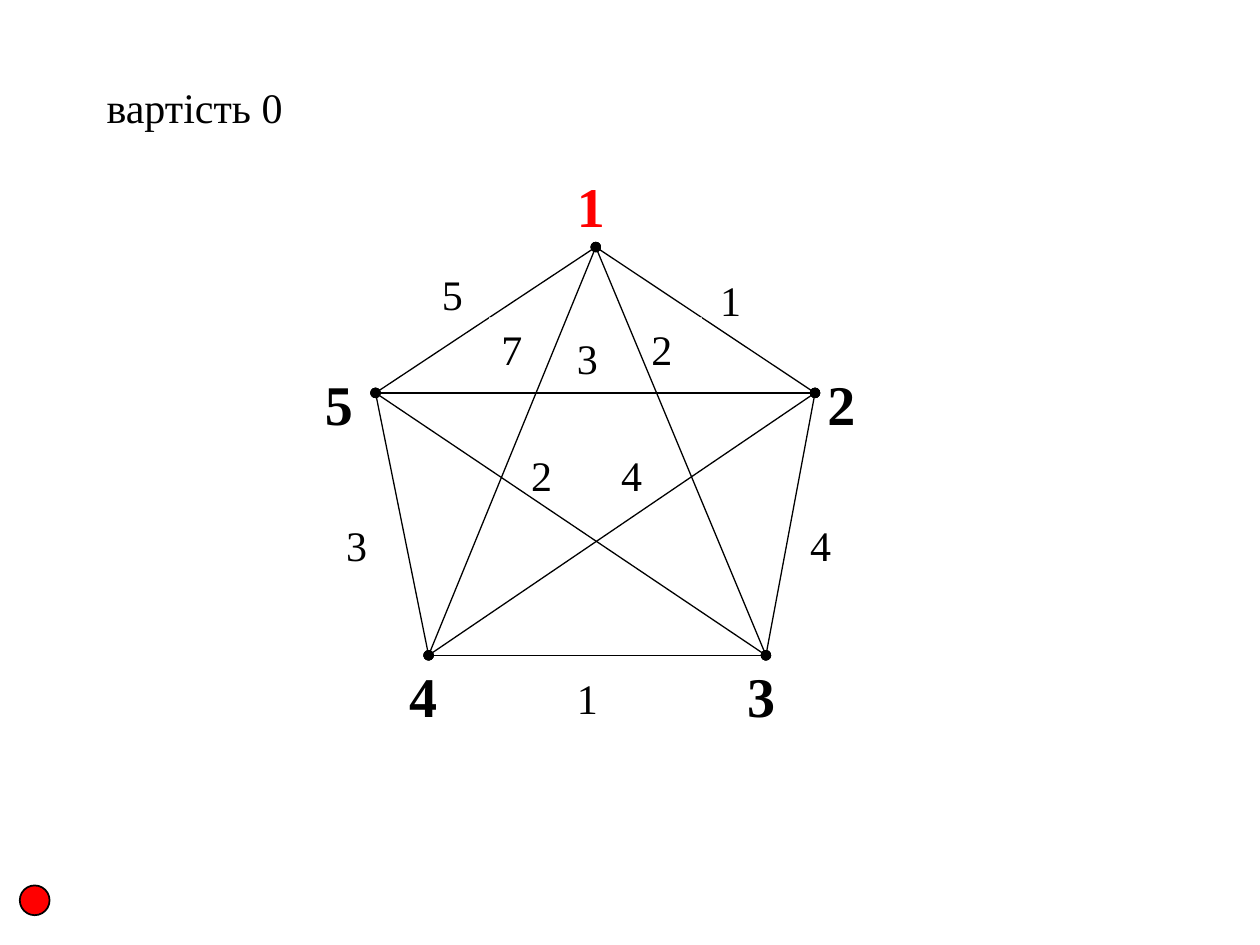
from lxml.etree import SubElement
from pptx import Presentation
from pptx.dml.color import RGBColor
from pptx.enum.shapes import MSO_CONNECTOR, MSO_SHAPE
from pptx.enum.text import MSO_ANCHOR, MSO_AUTO_SIZE, PP_ALIGN
from pptx.oxml.ns import qn
from pptx.util import Cm, Pt

COLORS = {"black": "000000", "white": "FFFFFF", "red": "FF0000"}
RGB = {name: RGBColor.from_string(value) for name, value in COLORS.items()}

# number: (point, label corner, label height, label colour)
VERTICES = {
    1: ((12.01, 4.98), (11.38, 3.33), 1.6, "red"),
    2: ((16.43, 7.92), (16.43, 7.32), 1.19, "black"),
    3: ((15.44, 13.21), (14.81, 13.21), 1.19, "black"),
    4: ((8.64, 13.21), (8, 13.21), 1.19, "black"),
    5: ((7.57, 7.92), (6.3, 7.32), 1.19, "black"),
}
# start, end, cost, label corner
EDGES = [
    (1, 5, 5, (8.66, 5.28)),
    (2, 5, 3, (11.38, 6.58)),
    (2, 1, 1, (14.27, 5.41)),
    (3, 1, 2, (12.88, 6.4)),
    (1, 4, 7, (9.86, 6.4)),
    (3, 5, 2, (10.46, 8.94)),
    (2, 4, 4, (12.27, 8.94)),
    (3, 4, 1, (11.38, 13.44)),
    (2, 3, 4, (16.08, 10.34)),
    (5, 4, 3, (6.73, 10.34)),
]


def style_text(p, size, color="black", bold=False):
    font = p.runs[0].font
    font.name = "Times New Roman"
    font.size = Pt(size)
    font.bold = bold
    font.color.rgb = RGB[color]


def add_label(shapes, number, corner, height, size, color="black", bold=False):
    s = shapes.add_shape(MSO_SHAPE.RECTANGLE, Cm(corner[0]), Cm(corner[1]), Cm(1.27), Cm(height))
    s.shadow.inherit = False
    s.fill.solid()
    s.fill.fore_color.rgb = RGB["white"]
    s.line.fill.background()
    tf = s.text_frame
    tf.text = str(number)
    tf.vertical_anchor = MSO_ANCHOR.TOP
    p = tf.paragraphs[0]
    p.alignment = PP_ALIGN.LEFT
    style_text(p, size, color, bold)


prs = Presentation()
prs.slide_width, prs.slide_height = Cm(25.4), Cm(19.05)
slide = prs.slides.add_slide(prs.slide_layouts[6])

for number, (point, corner, height, color) in VERTICES.items():
    add_label(slide.shapes, number, corner, height, 32, color, bold=True)

for start, end, cost, corner in EDGES:
    group = slide.shapes.add_group_shape()
    add_label(group.shapes, cost, corner, 1.19, 24)
    (x1, y1), (x2, y2) = VERTICES[start][0], VERTICES[end][0]
    edge = group.shapes.add_connector(MSO_CONNECTOR.STRAIGHT, Cm(x1), Cm(y1), Cm(x2), Cm(y2))
    edge.line.color.rgb = RGB["black"]
    edge.line.width = Pt(0.75)
    ln = edge.line._get_or_add_ln()
    for tag in ("a:headEnd", "a:tailEnd"):
        SubElement(ln, qn(tag), type="oval")
    SubElement(edge._element.spPr, qn("a:effectLst"))

cost_box = slide.shapes.add_textbox(Cm(1.9), Cm(1.52), Cm(4.09), Cm(1.27))
tf = cost_box.text_frame
tf.text = "вартість 0"
tf.word_wrap = False
tf.auto_size = MSO_AUTO_SIZE.SHAPE_TO_FIT_TEXT
tf.vertical_anchor = MSO_ANCHOR.MIDDLE
p = tf.paragraphs[0]
p.alignment = PP_ALIGN.JUSTIFY
style_text(p, 24)

marker = slide.shapes.add_shape(MSO_SHAPE.OVAL, Cm(0.4), Cm(17.85), Cm(0.6), Cm(0.6))
marker.shadow.inherit = False
marker.fill.solid()
marker.fill.fore_color.rgb = RGB["red"]
marker.line.color.rgb = RGB["black"]
marker.line.width = Pt(1)

prs.save("out.pptx")
